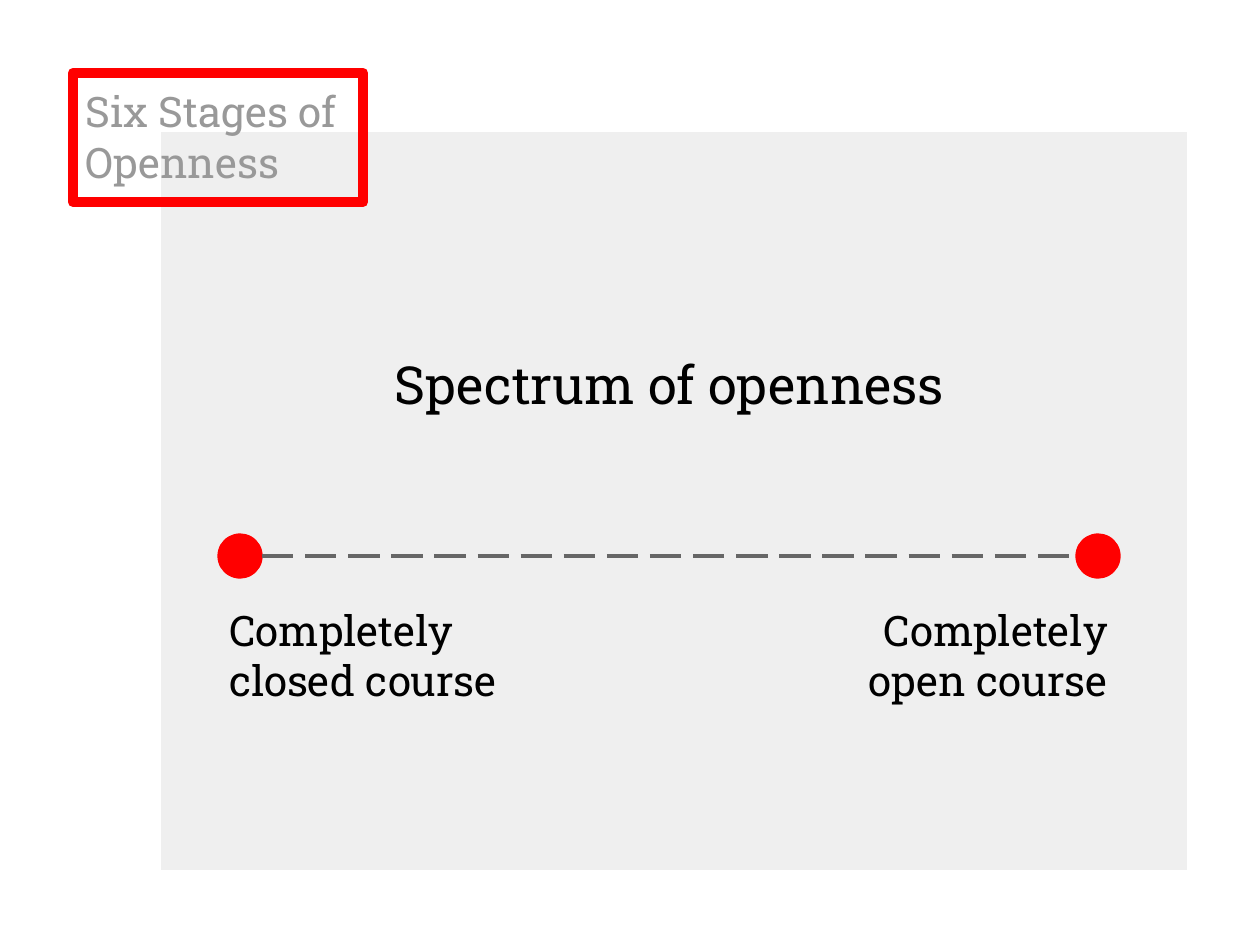
"""Build the openness spectrum slide."""
from dataclasses import dataclass

from lxml import etree
from pptx import Presentation
from pptx import util as u
from pptx.dml.color import RGBColor
from pptx.enum import dml, shapes, text
from pptx.oxml.ns import qn

PX = u.Inches(1) / 126
FONT = "Roboto Slab"
RED, GREY, BLACK = "FF0000", "999999", "000000"
PANEL, DASH = "EFEFEF", "666666"
DOT, AXIS_Y = 44, 556


@dataclass
class Box:
    x: int
    y: int
    w: int
    h: int

    def emu(self) -> list[int]:
        """Return left, top, width and height in EMU."""
        return [px(v) for v in (self.x, self.y, self.w, self.h)]


@dataclass
class Label:
    box: Box
    words: str
    size: int = 24
    color: str = BLACK
    align: text.PP_ALIGN = text.PP_ALIGN.LEFT
    anchor: text.MSO_ANCHOR = text.MSO_ANCHOR.MIDDLE


TITLE = Label(Box(73, 73, 290, 129), "Six Stages of Openness",
              color=GREY, anchor=text.MSO_ANCHOR.TOP)
LABELS = [
    Label(Box(217, 597, 336, 115), "Completely closed course"),
    Label(Box(839, 597, 281, 115), "Completely open course", align=text.PP_ALIGN.RIGHT),
    Label(Box(382, 326, 591, 115), "Spectrum of openness", size=30),
]
DOTS = [Box(x, AXIS_Y - DOT // 2, DOT, DOT) for x in (218, 1076)]


def px(n: int) -> int:
    """Turn pixels into EMU."""
    return round(n * PX)


def rgb(color: str) -> RGBColor:
    """Turn a hex string into a colour."""
    return RGBColor.from_string(color)


def assign(obj, **values) -> None:
    """Set several attributes of an object."""
    for name, value in values.items():
        setattr(obj, name, value)


def place(sp, box: Box) -> None:
    """Move and size a shape."""
    assign(sp, **dict(zip(("left", "top", "width", "height"), box.emu())))


def outline(sp, color: str, width: float) -> None:
    """Give a shape or connector a solid line."""
    sp.line.color.rgb = rgb(color)
    sp.line.width = u.Pt(width)


def add_filled(slide, kind: shapes.MSO_SHAPE, box: Box, color: str):
    """Add a filled preset shape without a line."""
    sp = slide.shapes.add_shape(kind, *box.emu())
    sp.shadow.inherit = False
    sp.fill.solid()
    sp.fill.fore_color.rgb = rgb(color)
    sp.line.fill.background()
    return sp


def write(sp, label: Label) -> None:
    """Write and format the words of a label."""
    tf = sp.text_frame
    inset = u.Inches(0.1)
    assign(tf, word_wrap=True, auto_size=text.MSO_AUTO_SIZE.NONE,
           vertical_anchor=label.anchor, margin_left=inset, margin_top=inset,
           margin_right=inset, margin_bottom=inset)
    p = tf.paragraphs[0]
    p.alignment = label.align
    r = p.add_run()
    r.text = label.words
    assign(r.font, name=FONT, size=u.Pt(label.size))
    r.font.color.rgb = rgb(label.color)


def add_axis(slide, left: Box, right: Box) -> None:
    """Join two dots with a dashed line."""
    cx = slide.shapes.add_connector(
        shapes.MSO_CONNECTOR.STRAIGHT,
        px(left.x + left.w), px(AXIS_Y), px(right.x), px(AXIS_Y))
    outline(cx, DASH, 2.25)
    cx.line.dash_style = dml.MSO_LINE.LONG_DASH
    etree.SubElement(cx._element.spPr, qn("a:effectLst"))


def main() -> None:
    """Build and save the slide."""
    prs = Presentation()
    assign(prs, slide_width=u.Inches(10), slide_height=u.Inches(7.5))
    slide = prs.slides.add_slide(prs.slide_layouts[5])

    panel = add_filled(slide, shapes.MSO_SHAPE.RECTANGLE, Box(161, 132, 1026, 738), PANEL)
    title = slide.shapes.title
    title._element.addprevious(panel._element)
    place(title, TITLE.box)
    outline(title, RED, 6)
    write(title, TITLE)

    for box in DOTS:
        outline(add_filled(slide, shapes.MSO_SHAPE.OVAL, box, RED), RED, 0.75)
    add_axis(slide, *DOTS)
    for label in LABELS:
        write(slide.shapes.add_textbox(*label.box.emu()), label)

    prs.save("out.pptx")


if __name__ == "__main__":
    main()
